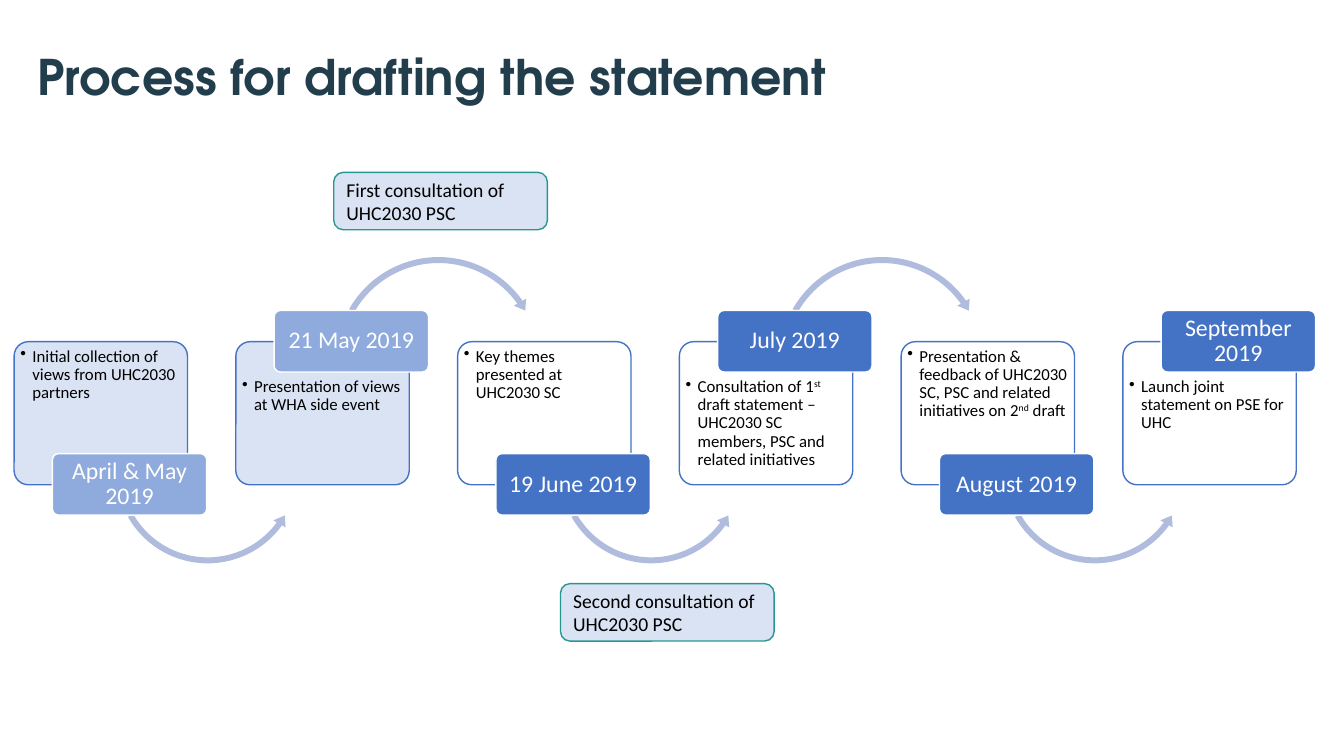
from lxml.etree import SubElement
from pptx import Presentation
from pptx.dml.color import RGBColor
from pptx.enum.shapes import MSO_SHAPE
from pptx.enum.text import MSO_ANCHOR, PP_ALIGN
from pptx.oxml.ns import qn
from pptx.util import Inches, Pt

SLIDE_WIDTH, SLIDE_HEIGHT = Inches(13.33), Inches(7.5)
COLUMN, ROW = SLIDE_WIDTH / 100, SLIDE_HEIGHT / 100

WHITE = RGBColor(0xFF, 0xFF, 0xFF)
BLACK = RGBColor(0x00, 0x00, 0x00)
NAVY = RGBColor(0x22, 0x3E, 0x4C)
BLUE = RGBColor(0x44, 0x72, 0xC4)
SOFT_BLUE = RGBColor(0x8F, 0xAA, 0xDC)
PALE_BLUE = RGBColor(0xDA, 0xE3, 0xF3)
ARROW_BLUE = RGBColor(0xB0, 0xBC, 0xDE)
TEAL = RGBColor(0x28, 0x97, 0x91)

TITLE_FONT = {"name": "TeX Gyre Adventor", "size": Pt(35), "bold": True}
CARD_FONT = {"name": "Calibri", "size": Pt(12)}
DATE_FONT = {"name": "Calibri", "size": Pt(17)}
CALLOUT_FONT = {"name": "Calibri", "size": Pt(14)}

CARD_LEFT, CARD_TOP, CARD_WIDTH, CARD_HEIGHT = 1.05, 45.2, 12.9, 18.93
CARD_PITCH = 16.5
ROUNDING = 0.1

ARROW_BELOW = {
    "kind": MSO_SHAPE.LEFT_CIRCULAR_ARROW,
    "box": (7.28, 4.53, 14.25, 25.33),
    "adjustments": (0.031, 3.856, 21.611, 90.245, 0.037),
}
ARROW_ABOVE = {
    "kind": MSO_SHAPE.CIRCULAR_ARROW,
    "box": (7.13, -11.73, 15.9, 28.27),
    "adjustments": (0.028, 3.429, 194.816, 125.755, 0.033),
}

STEPS = [
    ("April & May 2019", "Initial collection of views from UHC2030 partners", True),
    ("21 May 2019", "Presentation of views at WHA side event", True),
    ("19 June 2019", "Key themes presented at UHC2030 SC", False),
    ("July 2019", "Consultation of 1^st^ draft statement – UHC2030 SC members, "
     "PSC and related initiatives", False),
    ("August 2019", "Presentation & feedback of UHC2030 SC, PSC and related "
     "initiatives on 2^nd^ draft", False),
    ("September 2019", "Launch joint statement on PSE for UHC", False),
]

CALLOUTS = [
    ((24.83, 22.8, 15.9, 7.6), ["First consultation of", "UHC2030 PSC"]),
    ((41.7, 77.2, 15.9, 7.6), ["Second consultation of", "UHC2030 PSC"]),
]


def apply_format(target, values):
    """Set each named attribute on the target."""
    for name, value in values.items():
        setattr(target, name, value)


def grid_box(box):
    """Turn columns and rows into slide lengths."""
    left, top, width, height = box
    return [int(length) for length in
            (left * COLUMN, top * ROW, width * COLUMN, height * ROW)]


def add_block(slide, kind, box, fill, line=None, adjustments=()):
    """Add a flat preset shape with an optional outline."""
    shape = slide.shapes.add_shape(kind, *grid_box(box))
    shape.shadow.inherit = False
    shape.fill.solid()
    shape.fill.fore_color.rgb = fill
    if line is None:
        shape.line.fill.background()
    else:
        shape.line.color.rgb = line
        shape.line.width = Pt(1)
    for index, value in enumerate(adjustments):
        shape.adjustments[index] = value
    return shape


def add_bullet(paragraph):
    """Give the paragraph a hanging bullet."""
    properties = paragraph._p.get_or_add_pPr()
    properties.set("marL", str(Inches(0.12)))
    properties.set("indent", str(-Inches(0.12)))
    SubElement(properties, qn("a:buChar")).set("char", "•")


def write_text(shape, lines, font, color, frame, paragraph_format, bullet=False):
    """Write lines in the shape, raising the parts set between carets."""
    text_frame = shape.text_frame
    apply_format(text_frame, {"word_wrap": True, **frame})
    for index, line in enumerate(lines):
        paragraph = text_frame.add_paragraph() if index else text_frame.paragraphs[0]
        apply_format(paragraph, {"alignment": PP_ALIGN.LEFT, **paragraph_format})
        if bullet:
            add_bullet(paragraph)
        for position, part in enumerate(line.split("^")):
            run = paragraph.add_run()
            run.text = part
            apply_format(run.font, font)
            run.font.color.rgb = color
            if position % 2:
                run._r.get_or_add_rPr().set("baseline", "30000")


def add_title(slide, box, text):
    """Place the slide title."""
    title = slide.shapes.add_textbox(*grid_box(box))
    write_text(title, [text], TITLE_FONT, NAVY, {}, {"line_spacing": 0.9})


def add_step(slide, box, step, date_above, has_arrow):
    """Draw one step: its card, the arrow to the next and the date label."""
    date, text, done = step
    left, top, width, height = box
    card = add_block(slide, MSO_SHAPE.ROUNDED_RECTANGLE, box,
                     PALE_BLUE if done else WHITE, BLUE, [ROUNDING])
    card_frame = {
        "margin_left": Inches(0.02), "margin_right": Inches(0.02),
        "margin_top": Inches(0.32 if date_above else 0.02),
        "margin_bottom": Inches(0.02), "vertical_anchor": MSO_ANCHOR.TOP,
    }
    write_text(card, [text], CARD_FONT, BLACK, card_frame,
               {"line_spacing": 0.9}, bullet=True)

    if has_arrow:
        arrow = ARROW_ABOVE if date_above else ARROW_BELOW
        across, down, arrow_width, arrow_height = arrow["box"]
        add_block(slide, arrow["kind"],
                  (left + across, top + down, arrow_width, arrow_height),
                  ARROW_BLUE, adjustments=arrow["adjustments"])

    label_top = top - 4.13 if date_above else top + height - 4.13
    label = add_block(slide, MSO_SHAPE.ROUNDED_RECTANGLE,
                      (left + 2.85, label_top, width * 0.89, 8.13),
                      SOFT_BLUE if done else BLUE, WHITE, [ROUNDING])
    label_frame = {
        "margin_left": Inches(0.04), "margin_right": Inches(0.04),
        "margin_top": Inches(0.02), "margin_bottom": Inches(0.02),
        "vertical_anchor": MSO_ANCHOR.MIDDLE,
    }
    write_text(label, [date], DATE_FONT, WHITE, label_frame,
               {"alignment": PP_ALIGN.CENTER, "line_spacing": 0.9})


def add_callout(slide, box, lines):
    """Draw a consultation note."""
    callout = add_block(slide, MSO_SHAPE.ROUNDED_RECTANGLE, box, PALE_BLUE, TEAL)
    write_text(callout, lines, CALLOUT_FONT, BLACK,
               {"vertical_anchor": MSO_ANCHOR.MIDDLE}, {})


def main():
    """Build and save the process slide."""
    presentation = Presentation()
    apply_format(presentation, {"slide_width": SLIDE_WIDTH,
                                "slide_height": SLIDE_HEIGHT})
    slide = presentation.slides.add_slide(presentation.slide_layouts[6])
    add_title(slide, (2.03, 6.4, 95.2, 16.13), "Process for drafting the statement")
    for index, step in enumerate(STEPS):
        box = (CARD_LEFT + index * CARD_PITCH, CARD_TOP, CARD_WIDTH, CARD_HEIGHT)
        add_step(slide, box, step, date_above=index % 2 == 1,
                 has_arrow=index < len(STEPS) - 1)
    for box, lines in CALLOUTS:
        add_callout(slide, box, lines)
    presentation.save("out.pptx")


if __name__ == "__main__":
    main()
